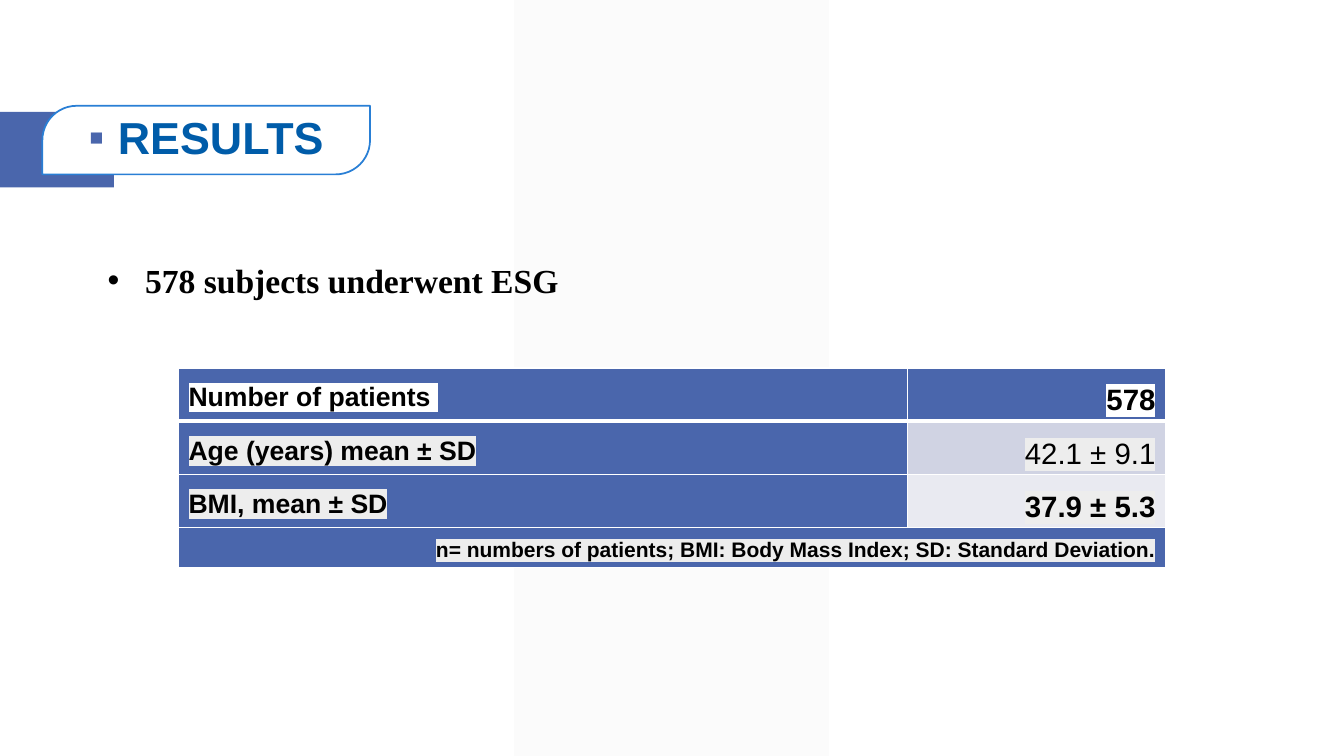
from lxml.etree import SubElement
from pptx import Presentation
from pptx.dml.color import RGBColor
from pptx.enum.shapes import MSO_SHAPE
from pptx.enum.text import MSO_ANCHOR, PP_ALIGN
from pptx.oxml.ns import qn
from pptx.util import Inches, Pt

COLORS = {
    "white": "FFFFFF", "black": "000000", "band": "F2F2F2", "blue": "4A66AC",
    "outline": "297FD5", "title": "005CA9", "mark": "EDEDED",
    "row_dark": "D0D3E3", "row_light": "E9EAF1",
}
CELL = Inches(0.1)
INDENT = {"title": 0.29, "list": 0.37}


def rgb(name):
    return RGBColor.from_string(COLORS[name])


def apply(target, values):
    for name, value in values.items():
        setattr(target, name, value)


def color_node(parent, tag, name):
    SubElement(SubElement(parent, qn(tag)), qn("a:srgbClr"), val=COLORS[name])


class ResultsPage:
    def __init__(self, deck):
        self.page = deck.slides.add_slide(deck.slide_layouts[6])

    def place(self, *grid):
        return [round(CELL * units) for units in grid]

    def shape(self, kind, grid, fill, line=None, adjustments=(), alpha=None):
        box = self.page.shapes.add_shape(kind, *self.place(*grid))
        box.shadow.inherit = False
        for index, value in enumerate(adjustments):
            box.adjustments[index] = value
        box.fill.solid()
        box.fill.fore_color.rgb = rgb(fill)
        if alpha:
            tint = box.fill._xPr.find(qn("a:solidFill"))[0]
            SubElement(tint, qn("a:alpha"), val=str(alpha * 1000))
        if line:
            box.line.color.rgb = rgb(line)
            box.line.width = Pt(1.25)
        else:
            box.line.fill.background()
        return box

    def text_box(self, grid):
        return self.page.shapes.add_textbox(*self.place(*grid))

    def paragraph(self, frame, text, size, color="black", font="Arial", bold=True,
                  mark=None, **para_format):
        frame.word_wrap = True
        para = frame.paragraphs[0]
        apply(para, para_format)
        span = para.add_run()
        span.text = text
        apply(span.font, {"size": Pt(size), "bold": bold})
        span.font.color.rgb = rgb(color)
        if mark:
            color_node(span.font._element, "a:highlight", mark)
        span.font.name = font
        return para

    def bullet(self, para, symbol, indent, color):
        props = para._p.get_or_add_pPr()
        props.set("marL", str(Inches(indent)))
        props.set("indent", str(-Inches(indent)))
        color_node(props, "a:buClr", color)
        SubElement(props, qn("a:buFont"), typeface="Arial")
        SubElement(props, qn("a:buChar"), char=symbol)

    def table(self, grid, columns, rows):
        table = self.page.shapes.add_table(len(rows), len(columns), *self.place(*grid)).table
        apply(table, {"first_row": False, "horz_banding": False})
        for column, width in zip(table.columns, self.place(*columns)):
            column.width = width
        for index, (height, cells) in enumerate(rows):
            table.rows[index].height = self.place(height)[0]
            for cell, (fill, content) in zip(table.rows[index].cells, cells):
                self.cell(cell, fill, top=3 if index == 1 else 1, bottom=3 if index == 0 else 1)
                if content:
                    self.paragraph(cell.text_frame, line_spacing=1.5, **content)
        return table

    def cell(self, cell, fill, top, bottom):
        apply(cell, {"margin_left": CELL, "margin_right": CELL,
                     "margin_top": 0, "margin_bottom": 0})
        props = cell._tc.get_or_add_tcPr()
        for side, width in {"L": 1, "R": 1, "T": top, "B": bottom}.items():
            edge = SubElement(props, qn(f"a:ln{side}"), w=str(Pt(width)))
            color_node(edge, "a:solidFill", "white")
        cell.fill.solid()
        cell.fill.fore_color.rgb = rgb(fill)


def label(text, mark="mark"):
    return "blue", {"text": text, "size": 19, "mark": mark, "alignment": PP_ALIGN.JUSTIFY}


def figure(text, fill, mark="mark", bold=True, size=21):
    return fill, {"text": text, "size": size, "mark": mark, "bold": bold,
                  "alignment": PP_ALIGN.RIGHT}


def main():
    deck = Presentation()
    apply(deck, {"slide_width": Inches(13.33), "slide_height": Inches(7.5)})
    results = ResultsPage(deck)

    results.shape(MSO_SHAPE.PARALLELOGRAM, (51, 0, 31.2, 75), "band", adjustments=[0], alpha=30)
    results.shape(MSO_SHAPE.RECTANGLE, (0, 11.1, 11.3, 7.5), "blue")

    title = results.shape(MSO_SHAPE.ROUND_2_DIAG_RECTANGLE, (4.2, 10.5, 32.5, 6.8),
                          "white", "outline", [0.5, 0])
    apply(title.text_frame, {"margin_left": 0, "margin_right": 0, "margin_top": 0,
                             "margin_bottom": 0, "vertical_anchor": MSO_ANCHOR.MIDDLE})
    heading = results.paragraph(title.text_frame, "RESULTS", 32, "title",
                                alignment=PP_ALIGN.CENTER, line_spacing=0.9,
                                space_before=Pt(12), space_after=Pt(2))
    results.bullet(heading, "▪", INDENT["title"], "blue")

    subjects = results.text_box((9.7, 25.3, 66.7, 5))
    finding = results.paragraph(subjects.text_frame, "578 subjects underwent ESG", 24,
                                font="Times New Roman", alignment=PP_ALIGN.JUSTIFY)
    results.bullet(finding, "•", INDENT["list"], "black")

    note = "n= numbers of patients; BMI: Body Mass Index; SD: Standard Deviation."
    patients = results.table((17.7, 36.5, 97.9, 19.8), (72.3, 25.6), [
        (5.3, [label("Number of patients ", "white"), figure("578", "blue", "white")]),
        (5.2, [label("Age (years) mean ± SD"), figure("42.1 ± 9.1", "row_dark", bold=False)]),
        (5.2, [label("BMI, mean ± SD"), figure("37.9 ± 5.3", "row_light")]),
        (4, [figure(note, "blue", size=15), ("blue", None)]),
    ])
    patients.cell(3, 0).merge(patients.cell(3, 1))
    deck.save("out.pptx")


if __name__ == "__main__":
    main()
